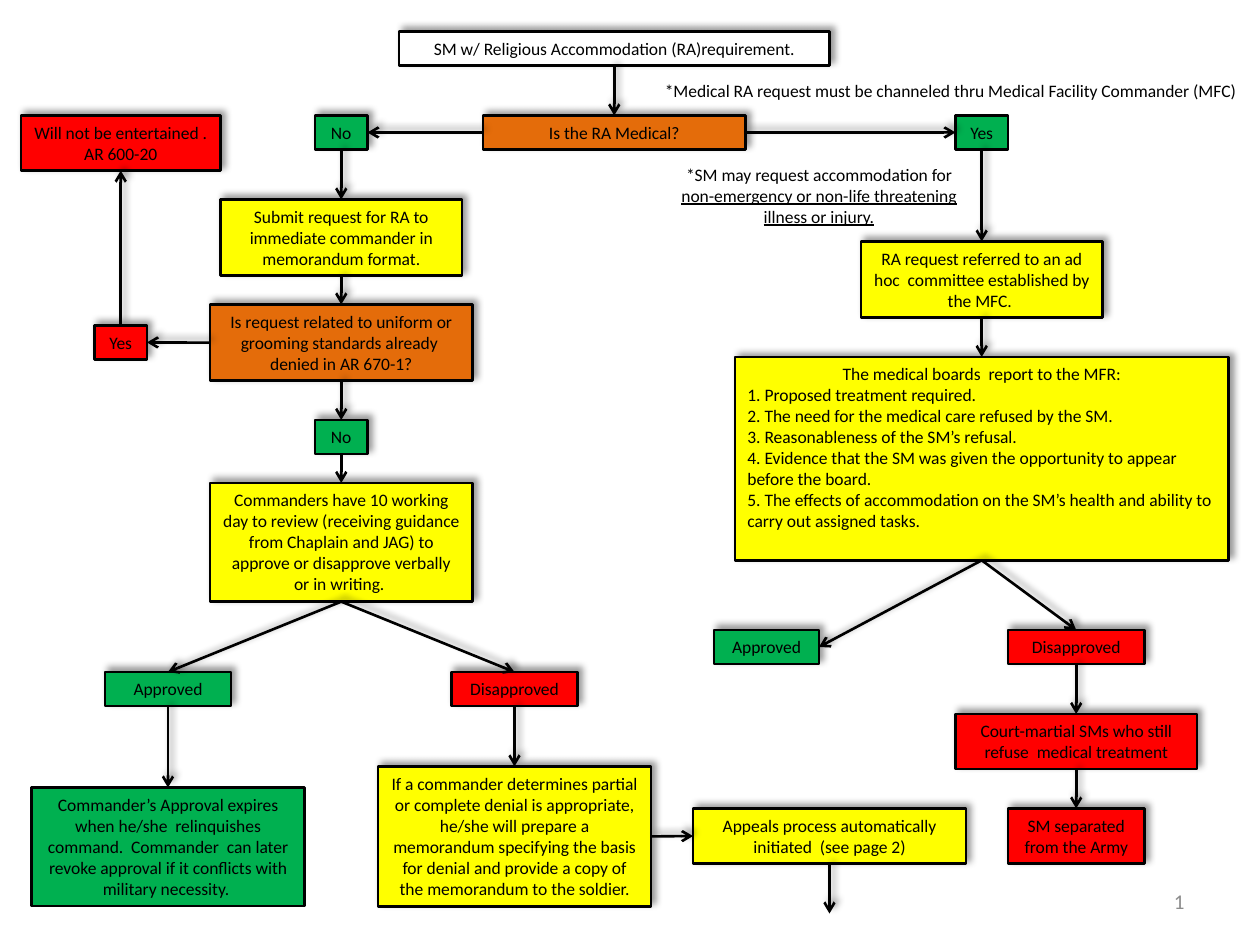
from lxml import etree
from pptx import Presentation
from pptx.dml.color import RGBColor
from pptx.enum.shapes import MSO_CONNECTOR, MSO_SHAPE
from pptx.enum.text import MSO_ANCHOR, MSO_AUTO_SIZE, PP_ALIGN
from pptx.oxml.ns import qn
from pptx.util import Pt

CENTER, LEFT, RIGHT = PP_ALIGN.CENTER, PP_ALIGN.LEFT, PP_ALIGN.RIGHT
TOP_SIDE, LEFT_SIDE, BOTTOM_SIDE, RIGHT_SIDE = range(4)
BLACK, WHITE, GRAY = "000000", "FFFFFF", "8C8C8C"
GREEN, RED, YELLOW, ORANGE = "00B050", "FF0000", "FFFF00", "E46C0A"
FONT = "Calibri"
LINE_HEIGHT, PADDING = 12.1, 7.3

# name: (left, top, width, lines of text, fill, text)
BOXES = {
    "start": (228, 18, 246, 1, WHITE, "SM w/ Religious Accommodation (RA)requirement."),
    "medical": (276, 66, 150, 1, ORANGE, "Is the RA Medical?"),
    "not medical": (180, 66, 30, 1, GREEN, "No"),
    "is medical": (546, 66, 30, 1, GREEN, "Yes"),
    "submit": (126, 114, 138, 3, YELLOW,
               "Submit request for RA to immediate commander in memorandum format."),
    "uniform": (120, 174, 150, 3, ORANGE,
                "Is request related to uniform or grooming standards already  denied in AR 670-1?"),
    "is uniform": (54, 186, 30, 1, RED, "Yes"),
    "rejected": (12, 66, 114, 2, RED, "Will not be entertained .\nAR 600-20"),
    "not uniform": (180, 240, 30, 1, GREEN, "No"),
    "review": (120, 276, 150, 5, YELLOW,
               "Commanders have 10 working day to review (receiving guidance from Chaplain "
               "and JAG) to approve or disapprove verbally or in writing. "),
    "approved": (60, 384, 72, 1, GREEN, "Approved"),
    "disapproved": (258, 384, 72, 1, RED, "Disapproved"),
    "expires": (18, 450, 156, 5, GREEN,
                "Commander’s Approval expires when he/she  relinquishes command.  Commander  "
                "can later revoke approval if it conflicts with military necessity. "),
    "denial": (216, 438, 156, 6, YELLOW,
               "If a commander determines partial or complete denial is appropriate, he/she "
               "will prepare a memorandum specifying the basis for denial and provide a copy "
               "of the memorandum to the soldier."),
    "appeals": (396, 462, 156, 2, YELLOW,
                "Appeals process automatically initiated  (see page 2)"),
    "committee": (492, 138, 138, 3, YELLOW,
                  "RA request referred to an ad hoc  committee established by the MFC. "),
    "boards": (420, 204, 282, 9, YELLOW, "The medical boards  report to the MFR:"),
    "care approved": (408, 360, 60, 1, GREEN, "Approved"),
    "care disapproved": (576, 360, 78, 1, RED, "Disapproved"),
    "court-martial": (546, 408, 138, 2, RED,
                      "Court-martial SMs who still refuse  medical treatment"),
    "separated": (576, 462, 78, 2, RED, "SM separated from the Army"),
}
BOARD_ITEMS = [
    "1. Proposed treatment required.",
    "2. The need for the medical care refused by the SM.",
    "3. Reasonableness of the SM’s refusal.",
    "4. Evidence that the SM was given the opportunity to appear before the board.",
    "5. The effects of accommodation on the SM’s health and ability to carry out assigned tasks.",
]
DOWN = (BOTTOM_SIDE, TOP_SIDE)
LEFTWARD = (LEFT_SIDE, RIGHT_SIDE)
RIGHTWARD = (RIGHT_SIDE, LEFT_SIDE)
ARROWS = [
    ("start", "medical", DOWN),
    ("medical", "is medical", RIGHTWARD),
    ("medical", "not medical", LEFTWARD),
    ("not medical", "submit", DOWN),
    ("submit", "uniform", DOWN),
    ("uniform", "is uniform", LEFTWARD),
    ("is uniform", "rejected", (TOP_SIDE, BOTTOM_SIDE)),
    ("uniform", "not uniform", DOWN),
    ("not uniform", "review", DOWN),
    ("review", "approved", DOWN),
    ("review", "disapproved", DOWN),
    ("approved", "expires", DOWN),
    ("disapproved", "denial", DOWN),
    ("denial", "appeals", RIGHTWARD),
    ("is medical", "committee", DOWN),
    ("committee", "boards", DOWN),
    ("boards", "care approved", (BOTTOM_SIDE, RIGHT_SIDE)),
    ("boards", "care disapproved", DOWN),
    ("care disapproved", "court-martial", DOWN),
    ("court-martial", "separated", DOWN),
]
FLAT_BOXES = {"is medical", "expires"}
FLAT_ARROWS = {("not uniform", "review")}


def rgb(color):
    return RGBColor.from_string(color)


def add_run(p, text, size=10, color=BLACK, underline=None):
    """Add a run, turning each newline into a line break."""
    for i, part in enumerate(text.split("\n")):
        if i:
            p.add_line_break()
        r = p.add_run()
        r.text = part
        r.font.name, r.font.size, r.font.underline = FONT, Pt(size), underline
        r.font.color.rgb = rgb(color)


def set_shadow(sp, visible):
    """Give the shape its own effect list: a soft shadow or nothing."""
    sp_pr = sp._element.spPr
    for old in sp_pr.findall(qn("a:effectLst")):
        sp_pr.remove(old)
    effects = etree.SubElement(sp_pr, qn("a:effectLst"))
    if visible:
        shadow = etree.SubElement(effects, qn("a:outerShdw"), blurRad=str(Pt(4)),
                                  dist=str(Pt(3)), dir=str(315 * 60000), rotWithShape="0")
        color = etree.SubElement(shadow, qn("a:srgbClr"), val=BLACK)
        etree.SubElement(color, qn("a:alpha"), val="40000")


def set_line(sp):
    sp.line.color.rgb = rgb(BLACK)
    sp.line.width = Pt(1.5)


def add_box(left, top, width, lines, fill, text, shadow):
    height = PADDING + LINE_HEIGHT * lines
    sp = slide.shapes.add_shape(MSO_SHAPE.RECTANGLE, Pt(left), Pt(top), Pt(width), Pt(height))
    sp.fill.solid()
    sp.fill.fore_color.rgb = rgb(fill)
    set_line(sp)
    set_shadow(sp, shadow)
    tf = sp.text_frame
    tf.word_wrap = True
    tf.vertical_anchor = MSO_ANCHOR.TOP
    p = tf.paragraphs[0]
    p.alignment = CENTER
    add_run(p, text)
    return sp


def add_text(left, top, width, height, align=CENTER):
    tf = slide.shapes.add_textbox(Pt(left), Pt(top), Pt(width), Pt(height)).text_frame
    tf.word_wrap = True
    tf.auto_size = MSO_AUTO_SIZE.NONE
    tf.paragraphs[0].alignment = align
    return tf


def add_arrow(begin, begin_side, end=None, end_side=None, to=(0, 0), shadow=True):
    """Draw an arrow from a box side to another box side, or to a free point."""
    sp = slide.shapes.add_connector(MSO_CONNECTOR.STRAIGHT, 0, 0, Pt(to[0]), Pt(to[1]))
    sp.begin_connect(begin, begin_side)
    if end is not None:
        sp.end_connect(end, end_side)
    set_line(sp)
    etree.SubElement(sp.line._get_or_add_ln(), qn("a:tailEnd"), type="arrow")
    set_shadow(sp, shadow)


prs = Presentation()
prs.slide_width, prs.slide_height = Pt(720), Pt(540)
slide = prs.slides.add_slide(prs.slide_layouts[6])

note = add_text(366, 42, 354, 41)
add_run(note.paragraphs[0],
        "*Medical RA request must be channeled thru Medical Facility Commander (MFC)")

boxes = {name: add_box(*box, shadow=name not in FLAT_BOXES) for name, box in BOXES.items()}
for item in BOARD_ITEMS:
    p = boxes["boards"].text_frame.add_paragraph()
    p.alignment = LEFT
    add_run(p, item)

for start, end, (start_side, end_side) in ARROWS:
    add_arrow(boxes[start], start_side, boxes[end], end_side,
              shadow=(start, end) not in FLAT_ARROWS)
add_arrow(boxes["appeals"], BOTTOM_SIDE, to=(474, 522))

note = add_text(378, 90, 180, 43.6)
add_run(note.paragraphs[0], "*SM may request accommodation for ")
add_run(note.paragraphs[0], "non-emergency or non-life threatening illness or injury.",
        underline=True)

number = add_text(516, 500.5, 168, 28.75, RIGHT)
number.vertical_anchor = MSO_ANCHOR.MIDDLE
add_run(number.paragraphs[0], "1", 12, GRAY)

prs.save("out.pptx")
